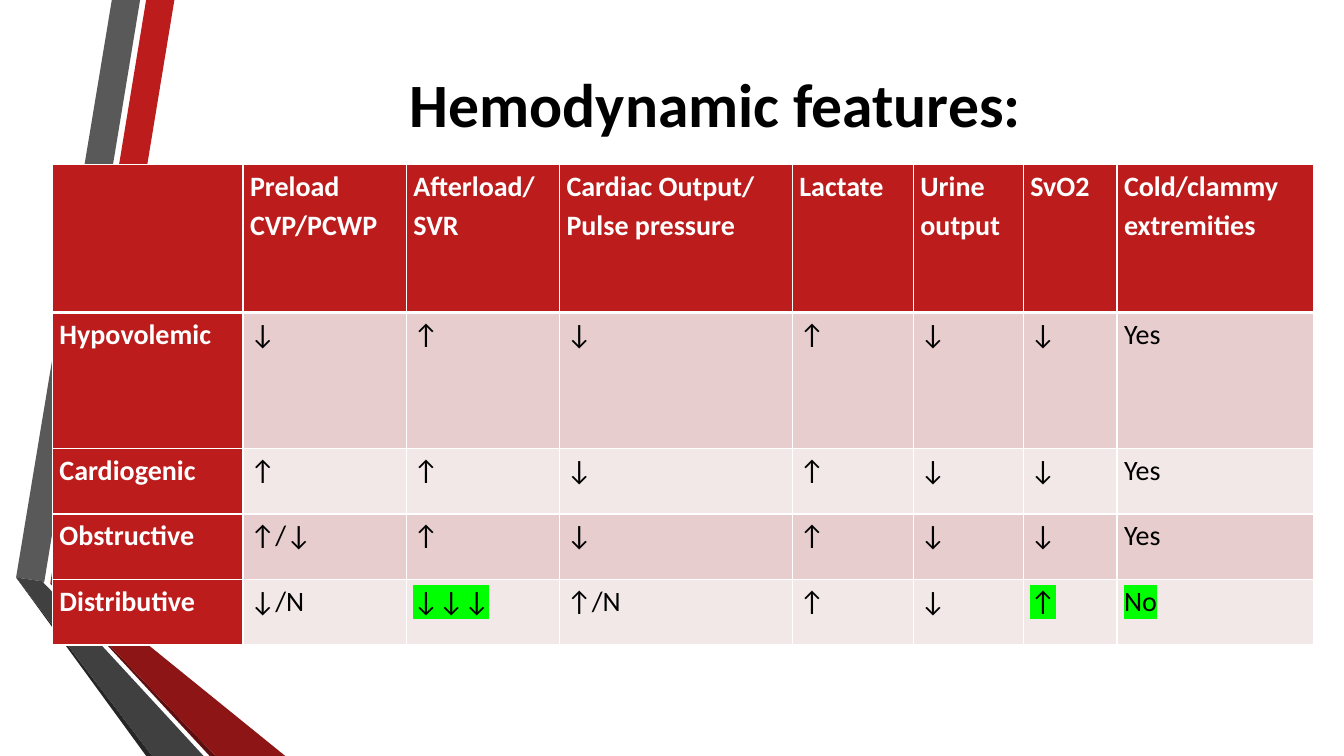
import dataclasses

import lxml.etree
import pptx
import pptx.dml.color
import pptx.enum.text
import pptx.oxml.ns
import pptx.util

COLUMNS, ROWS = 1333, 750
CELL = pptx.util.Inches(0.01)


@dataclasses.dataclass(frozen=True)
class Theme:
    """Colours, font and type sizes of the slide."""

    font: str = "Calibri"
    title_size: int = 44
    table_size: int = 20
    ink: str = "000000"
    paper: str = "FFFFFF"
    red: str = "BC1C1C"
    bands: tuple = ("E7CDCD", "F3E8E8")
    highlight: str = "00FF00"


THEME = Theme()

RIBBONS = [
    (THEME.red, [(34, 578), (61, 583), (157, 0), (129, 0)]),
    ("595959", [(123, 0), (95, 0), (0, 573), (28, 577)]),
    ("262626", [(0, 573), (129, 750), (135, 750)]),
    ("5E0E0E", [(34, 579), (192, 750), (198, 750)]),
    ("8D1515", [(34, 579), (198, 750), (267, 750), (61, 583), (34, 578)]),
    ("404040", [(186, 750), (32, 583), (27, 578), (28, 577), (0, 573), (135, 750)]),
]

FEATURES = [
    ["", "Preload\nCVP/PCWP", "Afterload/\nSVR", "Cardiac Output/ Pulse pressure",
     "Lactate", "Urine output", "SvO2", "Cold/clammy extremities"],
    ["Hypovolemic", "↓", "↑", "↓", "↑", "↓", "↓", "Yes"],
    ["Cardiogenic", "↑", "↑", "↓", "↑", "↓", "↓", "Yes"],
    ["Obstructive", "↑/↓", "↑", "↓", "↑", "↓", "↓", "Yes"],
    ["Distributive", "↓/N", "↓↓↓", "↑/N", "↑", "↓", "↑", "No"],
]
HIGHLIGHTED = {(4, 2), (4, 6), (4, 7)}
FEATURE_WIDTHS = [189, 162, 152, 231, 120, 109, 93, 195]
SHOCK_HEIGHTS = [147, 135, 65, 65, 65]


def rgb(colour):
    """Return the colour object of a hex value."""
    return pptx.dml.color.RGBColor.from_string(colour)


def apply_format(target, values):
    """Set each attribute of the target from a dict."""
    for attribute, value in values.items():
        setattr(target, attribute, value)


def place(box):
    """Turn a box in grid units into lengths on the slide."""
    return dict(zip(("left", "top", "width", "height"), (n * CELL for n in box)))


def format_run(run, size, colour, bold):
    """Give a run its type."""
    run.font.color.rgb = rgb(colour)
    apply_format(run.font, {"name": THEME.font, "size": pptx.util.Pt(size), "bold": bold})


def highlight(run):
    """Mark a run with the highlight colour."""
    mark = lxml.etree.Element(pptx.oxml.ns.qn("a:highlight"))
    lxml.etree.SubElement(mark, pptx.oxml.ns.qn("a:srgbClr"), val=THEME.highlight)
    run.font._element.find(pptx.oxml.ns.qn("a:latin")).addprevious(mark)


def border(cell, **points):
    """Draw the sides L, R, T and B of a cell in the paper colour."""
    properties = cell._tc.get_or_add_tcPr()
    for side, width in points.items():
        edge = lxml.etree.SubElement(
            properties, pptx.oxml.ns.qn(f"a:ln{side}"), w=str(pptx.util.Pt(width)))
        paint = lxml.etree.SubElement(edge, pptx.oxml.ns.qn("a:solidFill"))
        lxml.etree.SubElement(paint, pptx.oxml.ns.qn("a:srgbClr"), val=THEME.paper)


def add_ribbons(slide, box):
    """Draw the folded ribbons from the top left corner of the box."""
    left, top = box[:2]
    for colour, corners in RIBBONS:
        outline = slide.shapes.build_freeform(*corners[0], scale=CELL)
        outline.add_line_segments(corners[1:], close=True)
        ribbon = outline.convert_to_shape(left * CELL, top * CELL)
        ribbon.shadow.inherit = False
        ribbon.fill.solid()
        ribbon.fill.fore_color.rgb = rgb(colour)
        ribbon.line.fill.background()


def add_title(slide, box, heading):
    """Move the title placeholder into the box and fill it."""
    title = slide.shapes.title
    apply_format(title, place(box))
    title.text_frame.text = heading
    title.text_frame.vertical_anchor = pptx.enum.text.MSO_ANCHOR.MIDDLE
    paragraph = title.text_frame.paragraphs[0]
    paragraph.alignment = pptx.enum.text.PP_ALIGN.CENTER
    format_run(paragraph.runs[0], THEME.title_size, THEME.ink, True)


def fill_feature(cell, row, column, wording):
    """Write and colour one cell of the feature table."""
    heading = row == 0 or column == 0
    border(cell, L=1, R=1, T=3 if row == 1 else 1, B=3 if row == 0 else 1)
    cell.fill.solid()
    cell.fill.fore_color.rgb = rgb(THEME.red if heading else THEME.bands[(row - 1) % 2])
    side = pptx.util.Inches(0.07)
    apply_format(cell, {"margin_left": side, "margin_right": side,
                        "margin_top": 0, "margin_bottom": 0})
    cell.text = wording
    for paragraph in cell.text_frame.paragraphs:
        paragraph.line_spacing = 1.15
        for run in paragraph.runs:
            format_run(run, THEME.table_size, THEME.paper if heading else THEME.ink, heading)
            if (row, column) in HIGHLIGHTED:
                highlight(run)


def add_features(slide, box):
    """Build the table of features by shock type in the box."""
    table = slide.shapes.add_table(len(FEATURES), len(FEATURE_WIDTHS), **place(box)).table
    for column, share in zip(table.columns, FEATURE_WIDTHS):
        column.width = round(box[2] * CELL * share / sum(FEATURE_WIDTHS))
    for row, share in zip(table.rows, SHOCK_HEIGHTS):
        row.height = round(box[3] * CELL * share / sum(SHOCK_HEIGHTS))
    for row, shock in enumerate(FEATURES):
        for column, wording in enumerate(shock):
            fill_feature(table.cell(row, column), row, column, wording)


def main():
    """Build the slide and save it."""
    deck = pptx.Presentation()
    apply_format(deck, {"slide_width": COLUMNS * CELL, "slide_height": ROWS * CELL})
    slide = deck.slides.add_slide(deck.slide_layouts.get_by_name("Title Only"))
    add_ribbons(slide, (16, 0, 267, ROWS))
    add_title(slide, (162, 49, 1096, 106), "Hemodynamic features:")
    add_features(slide, (52, 163, 1251, 477))
    deck.save("out.pptx")


if __name__ == "__main__":
    main()
